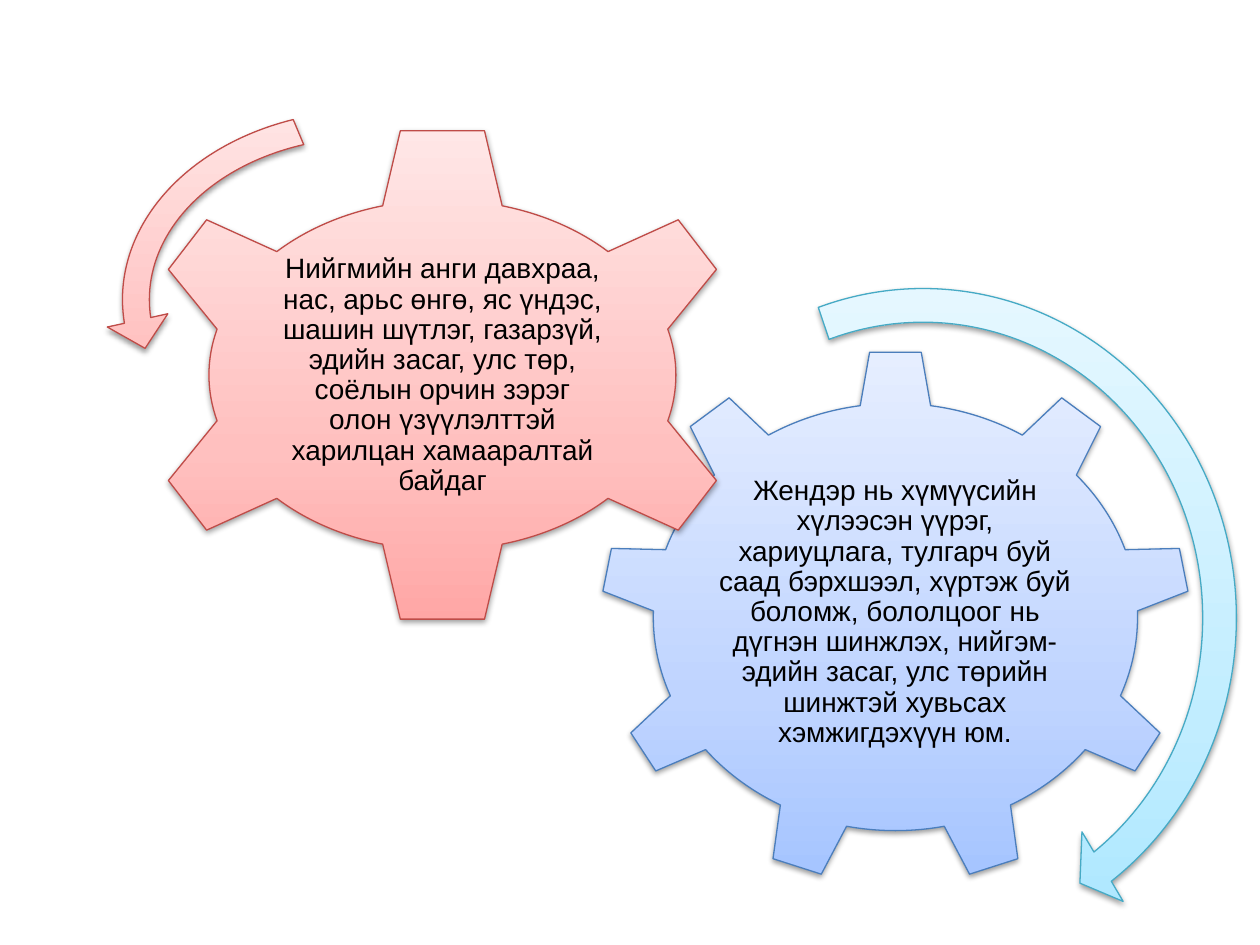
from copy import deepcopy

from lxml import etree
from pptx import Presentation, util as u
from pptx.dml.color import RGBColor
from pptx.enum import shapes, text
from pptx.oxml.ns import qn

PX = u.Inches(1) / 126
G = shapes.MSO_SHAPE
# gradient from bottom to top, then outline
COLORS = {
    "blue": ["A4C4FF", "BFD4FF", "E6EEFF", "4B7EBC"],
    "red": ["FFA6A5", "FFC0BF", "FFE7E7", "BF4C48"],
    "aqua": ["A7E6FF", "C1EDFF", "E7F8FF", "46AAC5"],
    "text": "000000",
    "shadow": "000000",
}


def add_part(kind, box, color, adj=()):
    """Add a gear or arrow with a three-stop gradient and a soft drop shadow."""
    sp = s.shapes.add_shape(kind, *[round(v * PX) for v in box])
    for i, value in enumerate(adj):
        sp.adjustments[i] = value
    *stops, outline = COLORS[color]
    sp.fill.gradient()
    sp.fill.gradient_angle = 90
    gs_list = sp._element.spPr.find(".//" + qn("a:gsLst"))
    gs_list.append(deepcopy(gs_list[0]))
    for stop, position, rgb in zip(sp.fill.gradient_stops, (0, 0.35, 1), stops):
        stop.position = position
        stop.color.rgb = RGBColor.from_string(rgb)
    sp.line.color.rgb = RGBColor.from_string(outline)
    sp.line.width = u.Pt(0.75)
    sp.shadow.inherit = False
    effects = sp._element.spPr.find(qn("a:effectLst"))
    shadow = etree.SubElement(effects, qn("a:outerShdw"), blurRad=str(u.Pt(3.1)),
                              dist=str(u.Pt(1.6)), dir="5400000", rotWithShape="0")
    rgb = etree.SubElement(shadow, qn("a:srgbClr"), val=COLORS["shadow"])
    etree.SubElement(rgb, qn("a:alpha"), val="38000")


def add_text(words, *, box, size=16, font="Arial", color="text", spacing=0.9, inset=3):
    tf = s.shapes.add_textbox(*[round(v * PX) for v in box]).text_frame
    tf.word_wrap = True
    tf.vertical_anchor = text.MSO_ANCHOR.MIDDLE
    tf.margin_left = tf.margin_right = tf.margin_top = tf.margin_bottom = round(inset * PX)
    p = tf.paragraphs[0]
    p.alignment = text.PP_ALIGN.CENTER
    p.line_spacing = spacing
    r = p.add_run()
    r.text = words
    r.font.size = u.Pt(size)
    r.font.name = font
    r.font.color.rgb = RGBColor.from_string(COLORS[color])


prs = Presentation()
prs.slide_width, prs.slide_height = u.Inches(10), u.Inches(7.5)
s = prs.slides.add_slide(prs.slide_layouts[6])

gears = [
    (G.GEAR_9, (600, 350, 591, 534), "blue", (714, 475, 362, 275),
     "Жендэр нь хүмүүсийн хүлээсэн үүрэг, хариуцлага, тулгарч буй саад бэрхшээл, "
     "хүртэж буй боломж, бололцоог нь дүгнэн шинжлэх, нийгэм- эдийн засаг, "
     "улс төрийн шинжтэй хувьсах хэмжигдэхүүн юм."),
    (G.GEAR_6, (134, 125, 617, 500), "red", (277, 252, 331, 247),
     "Нийгмийн анги давхраа, нас, арьс өнгө, яс үндэс, шашин шүтлэг, газарзүй, "
     "эдийн засаг, улс төр, соёлын орчин зэрэг олон үзүүлэлттэй харилцан "
     "хамааралтай байдаг"),
]
for kind, box, color, text_box, words in gears:
    add_part(kind, box, color)
    add_text(words, box=text_box)

add_part(G.CIRCULAR_ARROW, (586, 265, 674, 706), "aqua", (0.05, 3.13, 32.5, 150.82, 0.06))
add_part(G.LEFT_CIRCULAR_ARROW, (105, 93, 527, 413), "red", (0.065, 4.3, 104.89, 148.38, 0.075))

prs.save("out.pptx")
